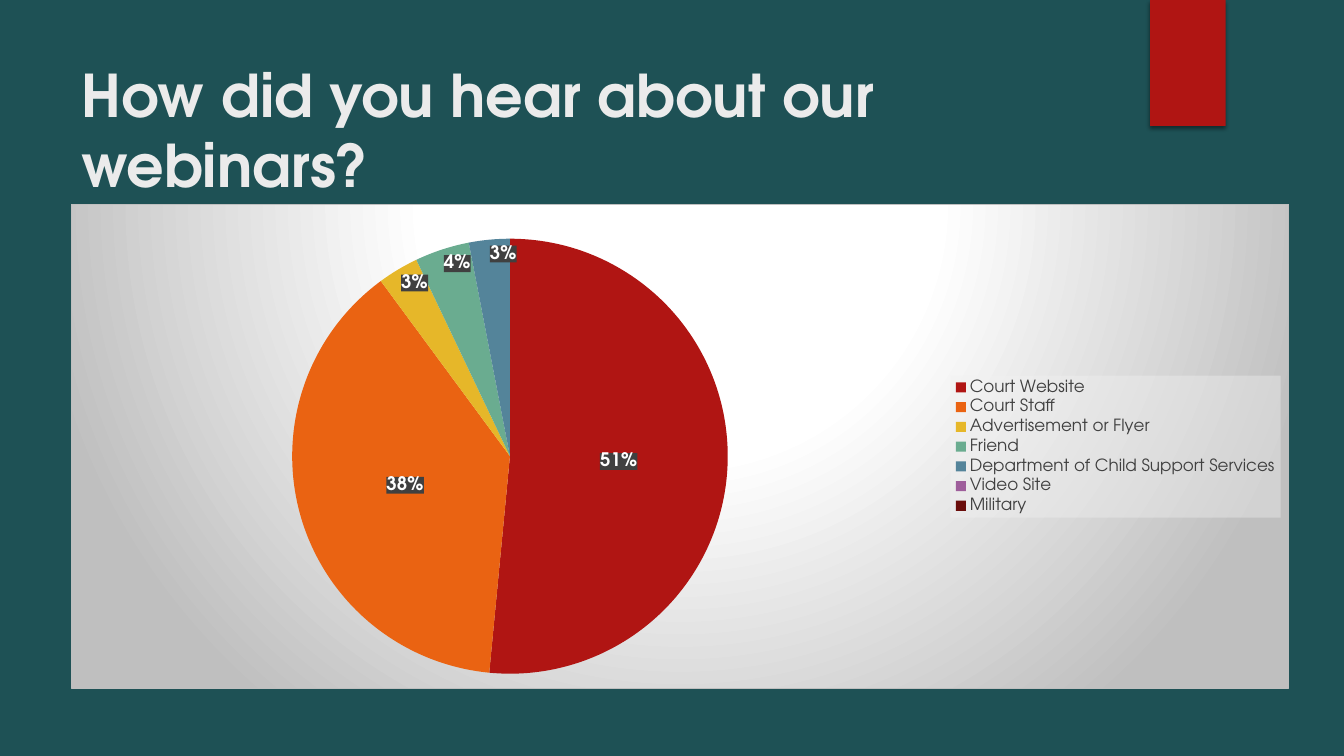
from lxml import etree
from pptx import Presentation
from pptx.chart.data import CategoryChartData
from pptx.dml.color import RGBColor
from pptx.enum.chart import XL_CHART_TYPE as ChartType, XL_LEGEND_POSITION as LegendPosition
from pptx.enum.shapes import MSO_SHAPE as Preset
from pptx.enum.text import MSO_ANCHOR as Anchor
from pptx.oxml import parse_xml
from pptx.oxml.ns import nsdecls, qn
from pptx.util import Pt

FONT = "TeX Gyre Adventor"
SOURCES = [
    ("Court Website", 51, "B01513"),
    ("Court Staff", 38, "EA6312"),
    ("Advertisement or Flyer", 3, "E6B729"),
    ("Friend", 4, "6AAC90"),
    ("Department of Child Support Services", 3, "54849A"),
    ("Video Site", 0, "9E5E9B"),
    ("Military", 0, "6A0D0B"),
]


def color(hex_string):
    return RGBColor.from_string(hex_string)


def paint(fill, hex_string):
    fill.solid()
    fill.fore_color.rgb = color(hex_string)


def format_font(font, size, hex_string, bold=False):
    font.name = FONT
    font.size = Pt(size)
    font.bold = bold
    font.color.rgb = color(hex_string)


def solid_xml(hex_string, alpha):
    return (f'<a:solidFill><a:srgbClr val="{hex_string}">'
            f'<a:alpha val="{alpha * 1000}"/></a:srgbClr></a:solidFill>')


def chart_properties(content):
    return parse_xml(f'<c:spPr {nsdecls("c", "a")}>{content}</c:spPr>')


def add_text(slide, text, left, top, width, height, **font_format):
    frame = slide.shapes.add_textbox(Pt(left), Pt(top), Pt(width), Pt(height)).text_frame
    frame.word_wrap = True
    frame.vertical_anchor = Anchor.BOTTOM
    run = frame.paragraphs[0].add_run()
    run.text = text
    format_font(run.font, **font_format)


def add_ribbon(slide, left, top, width, height, hex_string):
    shape = slide.shapes.add_shape(Preset.RECTANGLE, Pt(left), Pt(top), Pt(width), Pt(height))
    paint(shape.fill, hex_string)
    shape.line.fill.background()
    shape.shadow.inherit = False
    effects = shape._element.spPr.find(qn("a:effectLst"))
    effects.append(parse_xml(
        f'<a:outerShdw {nsdecls("a")} blurRad="{Pt(3)}" dist="{Pt(2)}" dir="5400000" '
        'rotWithShape="0"><a:srgbClr val="000000"><a:alpha val="45000"/></a:srgbClr></a:outerShdw>'))


def add_pie(slide, left, top, width, height):
    data = CategoryChartData()
    data.categories = [name for name, _, _ in SOURCES]
    data.add_series("Series 1", [share for _, share, _ in SOURCES])
    chart = slide.shapes.add_chart(
        ChartType.PIE, Pt(left), Pt(top), Pt(width), Pt(height), data).chart
    chart.has_title = False
    format_font(chart.font, 10, "FFFFFF")
    plot = chart.plots[0]
    plot.vary_by_categories = True
    series = plot.series[0]
    for index, (_, _, hex_string) in enumerate(SOURCES):
        point_format = series.points[index].format
        paint(point_format.fill, hex_string)
        point_format.line.fill.background()
    add_percent_labels(series)
    place_plot(chart, x=0.18, y=0.07, w=0.36, h=0.9)
    add_legend(chart)
    add_backdrop(chart)


def add_percent_labels(series):
    """Centre the large labels, move small ones to the rim, drop empty ones."""
    def settings(position):
        return (
            '<c:numFmt formatCode="0&quot;%&quot;" sourceLinked="0"/>'
            f'<c:spPr>{solid_xml("404040", 90)}</c:spPr>'
            '<c:txPr><a:bodyPr/><a:p><a:pPr><a:defRPr sz="1330" b="1">'
            f'{solid_xml("FFFFFF", 100)}<a:latin typeface="{FONT}"/>'
            '</a:defRPr></a:pPr><a:endParaRPr lang="en-US"/></a:p></c:txPr>'
            f'<c:dLblPos val="{position}"/><c:showLegendKey val="0"/><c:showVal val="1"/>'
            '<c:showCatName val="0"/><c:showSerName val="0"/><c:showPercent val="0"/>'
            '<c:showBubbleSize val="0"/>')

    special = ""
    for index, (_, share, _) in enumerate(SOURCES):
        if share < 10:
            content = settings("inEnd") if share else '<c:delete val="1"/>'
            special += f'<c:dLbl><c:idx val="{index}"/>{content}</c:dLbl>'
    labels = parse_xml(f'<c:dLbls {nsdecls("c", "a")}>{special}{settings("ctr")}'
                       '<c:showLeaderLines val="0"/></c:dLbls>')
    series._element.find(qn("c:cat")).addprevious(labels)


def place_plot(chart, **fractions):
    plot_area = chart._chartSpace.chart.plotArea
    for old_layout in plot_area.findall(qn("c:layout")):
        plot_area.remove(old_layout)
    layout = parse_xml(f'<c:layout {nsdecls("c")}><c:manualLayout/></c:layout>')
    settings = {"layoutTarget": "inner", "xMode": "edge", "yMode": "edge", **fractions}
    for name, value in settings.items():
        etree.SubElement(layout[0], qn(f"c:{name}")).set("val", str(value))
    plot_area.insert(0, layout)


def add_legend(chart):
    chart.has_legend = True
    legend = chart.legend
    legend.position = LegendPosition.RIGHT
    legend.include_in_layout = False
    format_font(legend.font, 12, "404040")
    backing = chart_properties(solid_xml("F2F2F2", 39))
    legend._element.find(qn("c:txPr")).addprevious(backing)


def add_backdrop(chart):
    stops = "".join(
        f'<a:gs pos="{position * 1000}"><a:srgbClr val="{hex_string}"/></a:gs>'
        for position, hex_string in [(0, "FFFFFF"), (39, "FFFFFF"), (100, "BFBFBF")])
    backdrop = chart_properties(
        f'<a:gradFill><a:gsLst>{stops}</a:gsLst><a:path path="circle">'
        '<a:fillToRect l="50000" t="-80000" r="50000" b="180000"/></a:path></a:gradFill>'
        f'<a:ln w="{Pt(0.75)}">{solid_xml("BFBFBF", 100)}</a:ln>')
    chart._chartSpace.chart.addnext(backdrop)


def main():
    presentation = Presentation()
    presentation.slide_width = Pt(960)
    presentation.slide_height = Pt(540)
    slide = presentation.slides.add_slide(presentation.slide_layouts[6])
    paint(slide.background.fill, "1E5155")
    add_ribbon(slide, 821.5, 0, 54, 90, "B01513")
    add_text(slide, "How did you hear about our webinars?", 51, 36, 741, 110,
             size=42, hex_string="EBEBEB", bold=True)
    add_pie(slide, 51, 146, 870, 346)
    presentation.save("out.pptx")


if __name__ == "__main__":
    main()
